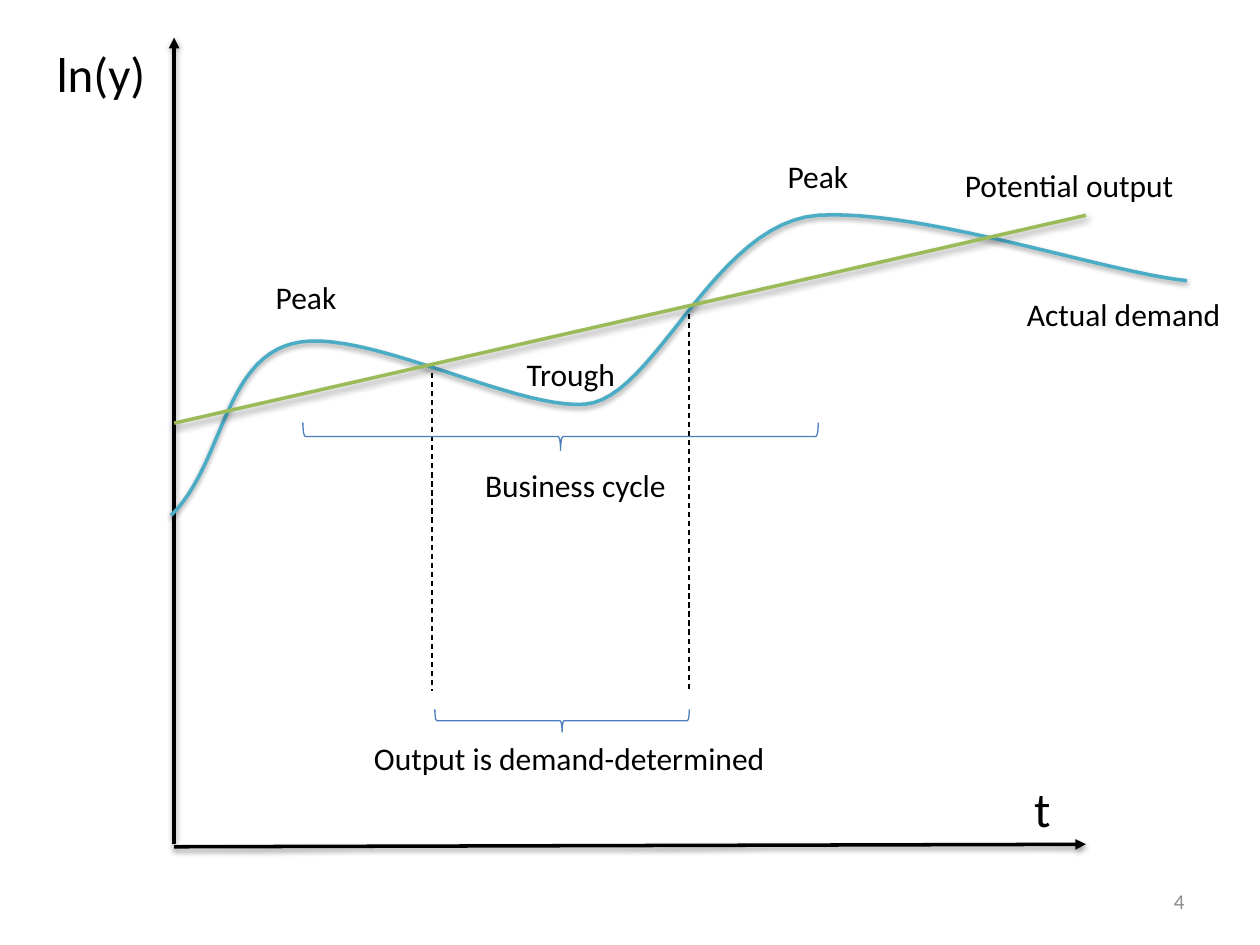
from lxml import etree
from pptx import Presentation
from pptx.dml.color import RGBColor
from pptx.enum.dml import MSO_LINE
from pptx.enum.shapes import MSO_CONNECTOR, MSO_SHAPE
from pptx.enum.text import MSO_ANCHOR, PP_ALIGN
from pptx.oxml.ns import qn
from pptx.util import Cm, Pt

LINE, BRACE, DASH = MSO_CONNECTOR.STRAIGHT, MSO_SHAPE.RIGHT_BRACE, MSO_LINE.DASH
TOP, MID = MSO_ANCHOR.TOP, MSO_ANCHOR.MIDDLE
LEFT, CENTER, RIGHT = PP_ALIGN.LEFT, PP_ALIGN.CENTER, PP_ALIGN.RIGHT
FONT = "Calibri"
INK = {"black": "000000", "demand": "4BACC6", "output": "9BBB59",
       "brace": "4B7EBC", "number": "8C8C8C"}

AXES = [(3.51, 17.02, 3.51, 0.76), (3.51, 17.07, 21.89, 17.02)]
TREND = (3.51, 8.53, 21.89, 4.34)
DROPS = [(8.71, 7.52, 8.71, 13.92), (13.89, 6.32, 13.89, 13.92)]
START = (3.45, 10.39)
CURVES = [
    ((4.5, 9.37), (4.5, 7.29), (5.89, 6.93)),
    ((7.26, 6.55), (10.36, 8.26), (11.79, 8.15)),
    ((13.21, 8.05), (14.4, 4.47), (16.51, 4.34)),
    ((18.62, 4.22), (22.28, 5.49), (23.93, 5.66)),
]
STEPS = 24
BRACES = [(11.3, 8.8, 10.39, 0.56), (11.33, 14.53, 5.13, 0.46)]
LABELS = [
    ("ln(y)", 0.89, 0.76, 3, 28, LEFT),
    ("t", 20.6, 15.57, 3, 28, LEFT),
    ("Potential output", 19.2, 3.23, 6.2, 18, LEFT),
    ("Actual demand", 20.45, 5.82, 6.2, 18, LEFT),
    ("Business cycle", 9.53, 9.27, 8.61, 18, LEFT),
    ("Output is demand-determined", 7.29, 14.78, 8.61, 18, LEFT),
    ("Peak", 4.95, 5.49, 2.44, 18, CENTER),
    ("Peak", 15.27, 3.05, 2.44, 18, CENTER),
    ("Trough", 10.29, 7.04, 2.44, 18, CENTER),
]


def tint(name):
    return RGBColor.from_string(INK[name])


def stroke(shape, color, width):
    shape.line.color.rgb = tint(color)
    shape.line.width = Pt(width)


def effect(shape, shown):
    group = etree.SubElement(shape._element.spPr, qn("a:effectLst"))
    if shown:
        cast = etree.SubElement(group, qn("a:outerShdw"), blurRad="40000",
                                dist="20000", dir="5400000", rotWithShape="0")
        shade = etree.SubElement(cast, qn("a:srgbClr"), val=INK["black"])
        etree.SubElement(shade, qn("a:alpha"), val="38000")


def add_line(slide, ends, color, width, arrow=False, dash=False):
    line = slide.shapes.add_connector(LINE, *map(Cm, ends))
    stroke(line, color, width)
    if dash:
        line.line.dash_style = DASH
    if arrow:
        etree.SubElement(line.line._get_or_add_ln(), qn("a:tailEnd"), type="triangle")
    effect(line, not dash)


def add_text(slide, text, x, y, wide, size, align, color="black", anchor=TOP):
    high = 1.45 if size > 18 else 1.02
    box = slide.shapes.add_textbox(Cm(x), Cm(y), Cm(wide), Cm(high))
    frame = box.text_frame
    frame.word_wrap = True
    frame.vertical_anchor = anchor
    frame.text = text
    para = frame.paragraphs[0]
    para.alignment = align
    font = para.runs[0].font
    font.name, font.size = FONT, Pt(size)
    font.color.rgb = tint(color)


def trace(start, curves):
    points = []
    for one, two, end in curves:
        for step in range(1, STEPS + 1):
            t = step / STEPS
            u = 1 - t
            points.append(tuple(
                Cm(u**3 * a + 3 * u * u * t * b + 3 * u * t * t * c + t**3 * d)
                for a, b, c, d in zip(start, one, two, end)))
        start = end
    return points


def add_curve(slide):
    pen = slide.shapes.build_freeform(*map(Cm, START))
    pen.add_line_segments(trace(START, CURVES), close=False)
    wave = pen.convert_to_shape()
    wave.fill.background()
    stroke(wave, "demand", 2)
    effect(wave, True)


def add_brace(slide, x, y, span, depth):
    brace = slide.shapes.add_shape(BRACE, Cm(x - depth / 2), Cm(y - span / 2),
                                   Cm(depth), Cm(span))
    brace.rotation = 90
    brace.shadow.inherit = False
    brace.fill.background()
    stroke(brace, "brace", 0.75)


def main():
    deck = Presentation()
    deck.slide_width, deck.slide_height = Cm(25.4), Cm(19.05)
    slide = deck.slides.add_slide(deck.slide_layouts[6])
    add_text(slide, "4", 18.21, 17.65, 5.92, 12, RIGHT, "number", MID)
    for ends in AXES:
        add_line(slide, ends, "black", 2, arrow=True)
    add_curve(slide)
    add_line(slide, TREND, "output", 2)
    for ends in DROPS:
        add_line(slide, ends, "black", 0.75, dash=True)
    for place in BRACES:
        add_brace(slide, *place)
    for label in LABELS:
        add_text(slide, *label)
    deck.save("out.pptx")


if __name__ == "__main__":
    main()
